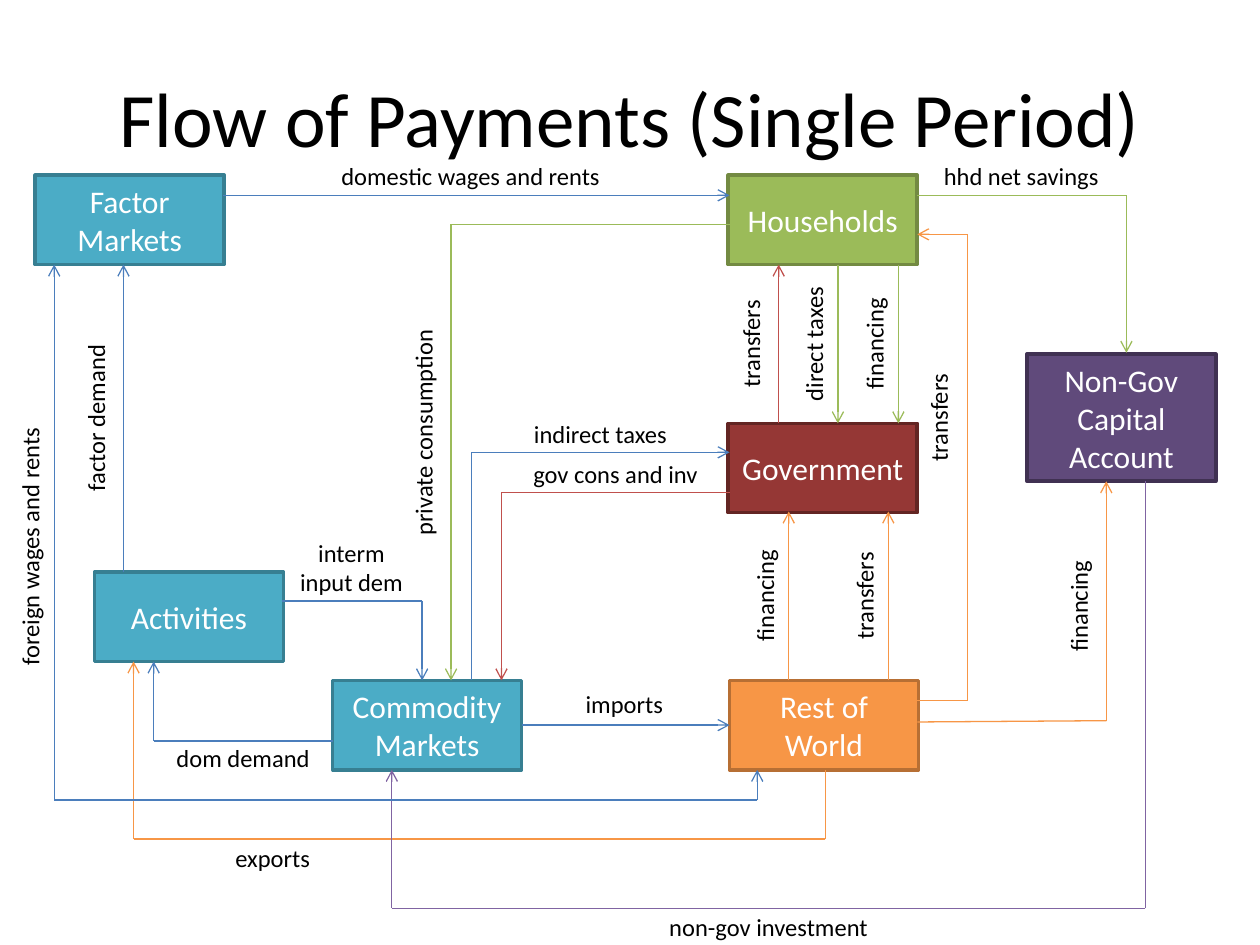
from pptx import Presentation
from pptx.dml.color import RGBColor
from pptx.enum.shapes import MSO_CONNECTOR, MSO_SHAPE
from pptx.enum.text import MSO_ANCHOR, MSO_AUTO_SIZE, PP_ALIGN
from pptx.oxml.ns import qn
from pptx.util import Pt
from lxml.etree import SubElement

PX = 9144  # 100 px to the inch
COLORS = {
    "black": "000000", "white": "FFFFFF",
    "teal": "4BACC6", "teal_edge": "377F92",
    "green": "9BBB59", "green_edge": "738A42",
    "orange": "F79646", "orange_edge": "B76F34",
    "maroon": "953735", "maroon_edge": "632523",
    "plum": "604A7B", "plum_edge": "403152",
    "blue": "4B7EBC", "red": "C0504D", "purple": "8064A2",
}
TITLE_BOX = (50, 30, 900, 125)
DIAGRAM_BOX = (0, 100, 1000, 650)

# name: (colour, left, top, width, height), within the diagram
SECTORS = {
    "Factor Markets": ("teal", 28, 39, 150, 71),
    "Activities": ("teal", 75, 354, 150, 71),
    "Commodity Markets": ("teal", 264, 440, 150, 71),
    "Households": ("green", 578, 39, 150, 71),
    "Government": ("maroon", 578, 236, 150, 71),
    "Rest of World": ("orange", 579, 440, 150, 71),
    "Non-Gov Capital Account": ("plum", 815, 181, 150, 101),
}

# (label, colour, points from payer to payee, label box), within the diagram
FLOWS = [
    ("domestic wages and rents", "blue", [(177, 55), (579, 55)], (224, 23, 299, 34)),
    ("factor demand", "blue", [(98, 354), (98, 110)], (59, 110, 44, 244)),
    ("dom demand", "blue", [(264, 488), (122, 488), (122, 425)], (122, 485, 142, 34)),
    ("exports", "orange", [(655, 511), (655, 566), (106, 566), (106, 425)],
     (138, 564, 157, 34)),
    ("interm input dem", "blue", [(224, 377), (335, 377), (335, 440)],
     (224, 322, 110, 57)),
    ("private consumption", "green", [(579, 78), (358, 78), (358, 440)],
     (319, 78, 44, 331)),
    ("indirect taxes", "blue", [(374, 440), (374, 259), (579, 259)],
     (374, 228, 205, 34)),
    ("gov cons and inv", "red", [(579, 291), (398, 291), (398, 440)],
     (398, 259, 181, 34)),
    ("hhd net savings", "green", [(728, 55), (894, 55), (894, 180)],
     (728, 23, 165, 34)),
    ("non-gov investment", "purple", [(909, 282), (909, 621), (311, 621), (311, 511)],
     (311, 619, 598, 34)),
    ("transfers", "orange", [(728, 456), (768, 456), (768, 86), (728, 86)],
     (728, 125, 44, 213)),
    ("transfers", "orange", [(705, 440), (705, 306)], (669, 306, 44, 134)),
    ("transfers", "red", [(618, 236), (618, 110)], (579, 110, 44, 126)),
    ("financing", "green", [(713, 110), (713, 236)], (677, 110, 44, 126)),
    ("financing", "orange", [(728, 473), (878, 472), (878, 282)], (839, 267, 44, 228)),
    ("direct taxes", "green", [(665, 110), (665, 236)], (629, 110, 44, 126)),
    ("financing", "orange", [(626, 440), (626, 306)], (590, 306, 44, 134)),
]
FOREIGN_FLOW = ("foreign wages and rents", "blue",
                [(601, 511), (601, 535), (43, 535), (43, 110)], (7, 212, 44, 244))


def rgb(name):
    return RGBColor.from_string(COLORS[name])


def emu(*lengths):
    return [length * PX for length in lengths]


def write(shape, text, size, color, vertical=False, anchor=MSO_ANCHOR.TOP):
    frame = shape.text_frame
    frame.word_wrap = True
    frame.vertical_anchor = anchor
    frame.text = text
    paragraph = frame.paragraphs[0]
    paragraph.alignment = PP_ALIGN.CENTER
    font = paragraph.runs[0].font
    font.name, font.size, font.color.rgb = "Calibri", Pt(size), rgb(color)
    if vertical:
        frame._txBody.bodyPr.set("vert", "vert270")


def draw_title(slide, box):
    title = slide.shapes.title
    title.left, title.top, title.width, title.height = emu(*box)
    write(title, "Flow of Payments (Single Period)", 44, "black", anchor=MSO_ANCHOR.MIDDLE)


def draw_sector(slide, name, color, box):
    sector = slide.shapes.add_shape(MSO_SHAPE.RECTANGLE, *emu(*box))
    sector.shadow.inherit = False
    sector.fill.solid()
    sector.fill.fore_color.rgb = rgb(color)
    sector.line.color.rgb = rgb(color + "_edge")
    sector.line.width = Pt(2)
    write(sector, name, 18, "white", anchor=MSO_ANCHOR.MIDDLE)
    return sector


def draw_segment(slide, start, end, color, head=False, tail=False):
    segment = slide.shapes.add_connector(MSO_CONNECTOR.STRAIGHT, *emu(*start, *end))
    segment.line.color.rgb = rgb(color)
    segment.line.width = Pt(0.75)
    line = segment.line._get_or_add_ln()
    for tag, wanted in (("a:headEnd", head), ("a:tailEnd", tail)):
        if wanted:
            SubElement(line, qn(tag), type="arrow")
    SubElement(segment._element.spPr, qn("a:effectLst"))
    return segment


def draw_label(slide, text, box):
    label = slide.shapes.add_textbox(*emu(*box))
    write(label, text, 14, "black", vertical=box[3] > box[2])
    label.text_frame.auto_size = MSO_AUTO_SIZE.SHAPE_TO_FIT_TEXT


def draw_flow(slide, origin, text, color, points, label_box, two_way=False):
    left, top = origin
    corners = [(left + x, top + y) for x, y in points]
    last = len(corners) - 2
    for i, (start, end) in enumerate(zip(corners, corners[1:])):
        draw_segment(slide, start, end, color, head=two_way and i == 0, tail=i == last)
    x, y, width, height = label_box
    draw_label(slide, text, (left + x, top + y, width, height))


def draw_diagram(slide, box):
    left, top = origin = box[:2]
    # Sectors
    sectors = {
        name: draw_sector(slide, name, color, (left + x, top + y, width, height))
        for name, (color, x, y, width, height) in SECTORS.items()
    }
    # Payments
    for flow in FLOWS:
        draw_flow(slide, origin, *flow)
    draw_flow(slide, origin, *FOREIGN_FLOW, two_way=True)
    # Imports run from side middle to side middle
    imports = draw_segment(slide, (left + 414, top + 476), (left + 579, top + 476),
                           "blue", tail=True)
    imports.begin_connect(sectors["Commodity Markets"], 3)
    imports.end_connect(sectors["Rest of World"], 1)
    draw_label(slide, "imports", (left + 413, top + 442, 165, 34))


def main():
    deck = Presentation()
    deck.slide_width, deck.slide_height = emu(1000, 750)
    slide = deck.slides.add_slide(deck.slide_layouts[5])
    draw_title(slide, TITLE_BOX)
    draw_diagram(slide, DIAGRAM_BOX)
    deck.save("out.pptx")


if __name__ == "__main__":
    main()
